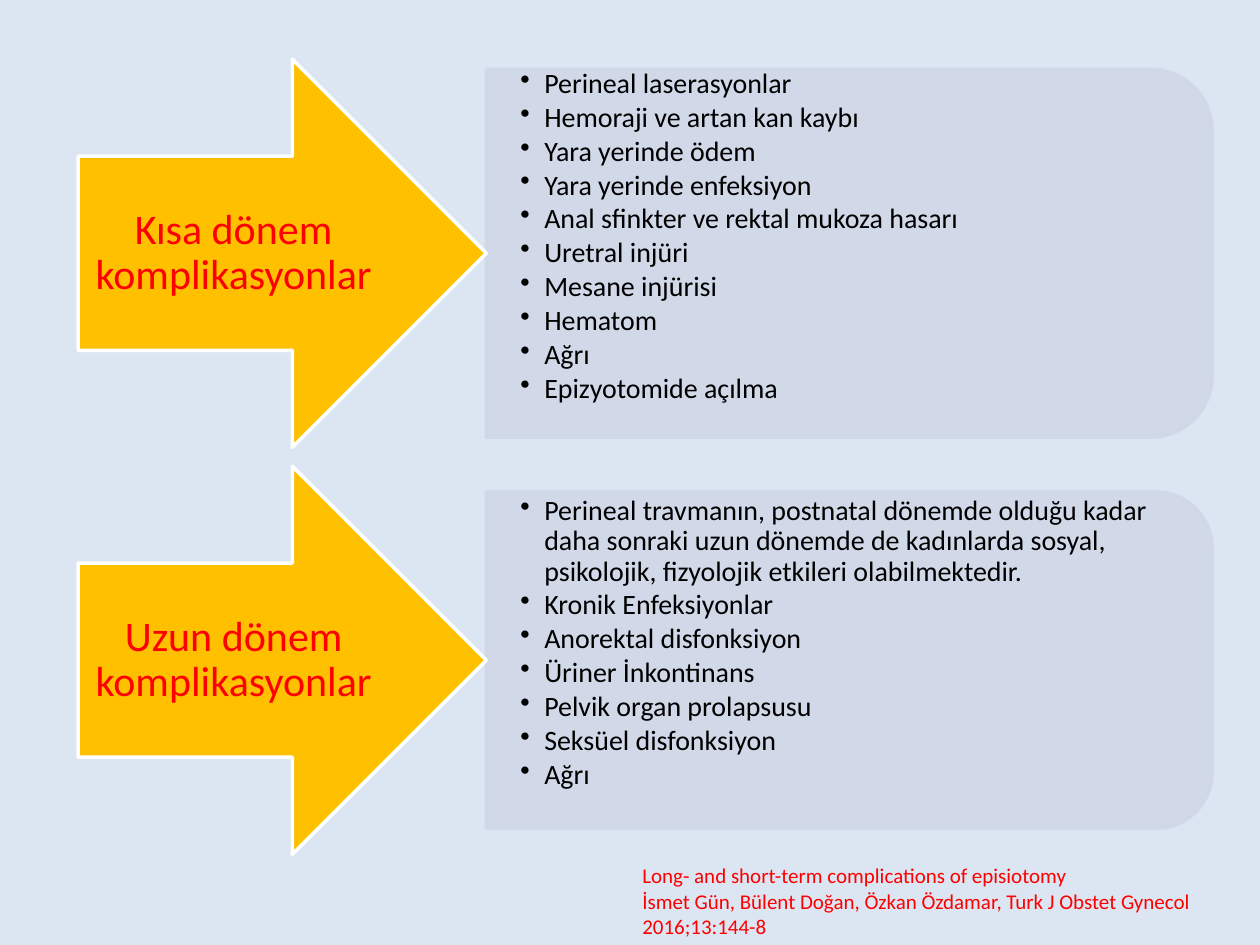
from dataclasses import dataclass

from lxml.etree import SubElement
from pptx import Presentation
from pptx.dml.color import RGBColor
from pptx.enum.shapes import MSO_SHAPE
from pptx.enum.text import MSO_ANCHOR, PP_ALIGN
from pptx.oxml.ns import qn
from pptx.shapes.autoshape import Shape
from pptx.slide import Slide
from pptx.util import Inches, Pt


@dataclass(frozen=True)
class Theme:
    font: str = "Calibri"
    background: RGBColor = RGBColor(0xDC, 0xE6, 0xF2)
    panel: RGBColor = RGBColor(0xD0, 0xD8, 0xE8)
    arrow: RGBColor = RGBColor(0xFF, 0xC0, 0x00)
    outline: RGBColor = RGBColor(0xFF, 0xFF, 0xFF)
    body: RGBColor = RGBColor(0x00, 0x00, 0x00)
    accent: RGBColor = RGBColor(0xFF, 0x00, 0x00)
    heading_size: int = 24
    body_size: int = 16
    citation_size: int = 12
    outline_width: int = 2
    panel_opacity: int = 90


@dataclass(frozen=True)
class Box:
    left: float
    top: float
    width: float
    height: float

    def lengths(self) -> tuple:
        return tuple(Inches(n) for n in (self.left, self.top, self.width, self.height))


@dataclass(frozen=True)
class Section:
    heading: str
    items: tuple[str, ...]
    arrow_top: float
    panel_height: float
    list_top: float


THEME = Theme()
ARROW_LEFT, ARROW_WIDTH, ARROW_HEIGHT = 0.62, 3.24, 3.08
HEADING_WIDTH = 2.47
PANEL_LEFT = ARROW_LEFT + ARROW_WIDTH
PANEL_WIDTH = 5.76
LIST_WIDTH = 5.62
BULLET_INDENT = 0.19

SECTIONS = (
    Section(
        "Kısa dönem komplikasyonlar",
        (
            "Perineal laserasyonlar",
            "Hemoraji ve artan kan kaybı",
            "Yara yerinde ödem",
            "Yara yerinde enfeksiyon",
            "Anal sfinkter ve rektal mukoza hasarı",
            "Uretral injüri",
            "Mesane injürisi",
            "Hematom",
            "Ağrı",
            "Epizyotomide açılma",
        ),
        arrow_top=0.47, panel_height=2.92, list_top=0.55,
    ),
    Section(
        "Uzun dönem komplikasyonlar",
        (
            "Perineal travmanın, postnatal dönemde olduğu kadar daha sonraki "
            "uzun dönemde de kadınlarda sosyal, psikolojik, fizyolojik etkileri "
            "olabilmektedir.",
            "Kronik Enfeksiyonlar",
            "Anorektal disfonksiyon",
            "Üriner İnkontinans",
            "Pelvik organ prolapsusu",
            "Seksüel disfonksiyon",
            "Ağrı",
        ),
        arrow_top=3.7, panel_height=2.67, list_top=3.94,
    ),
)
CITATION = (
    "Long- and short-term complications of episiotomy",
    "İsmet Gün, Bülent Doğan, Özkan Özdamar, Turk J Obstet Gynecol 2016;13:144-8",
)


def add_text(slide: Slide, box: Box, lines: tuple[str, ...], *, size: int,
             color: RGBColor, align: PP_ALIGN = PP_ALIGN.LEFT,
             anchor: MSO_ANCHOR = MSO_ANCHOR.TOP, side_inset: float = 0.1,
             end_inset: float = 0.05, line_spacing: float = 1.0,
             space_after: float = 0, bulleted: bool = False) -> None:
    frame = slide.shapes.add_textbox(*box.lengths()).text_frame
    frame.word_wrap = True
    frame.vertical_anchor = anchor
    frame.margin_left = frame.margin_right = Inches(side_inset)
    frame.margin_top = frame.margin_bottom = Inches(end_inset)
    for index, line in enumerate(lines):
        paragraph = frame.add_paragraph() if index else frame.paragraphs[0]
        paragraph.alignment = align
        paragraph.line_spacing = line_spacing
        paragraph.space_after = Pt(space_after)
        run = paragraph.add_run()
        run.text = line
        run.font.name = THEME.font
        run.font.size = Pt(size)
        run.font.color.rgb = color
        if bulleted:
            paragraph.level = 1
            properties = paragraph._p.get_or_add_pPr()
            properties.set("marL", str(Inches(BULLET_INDENT)))
            properties.set("indent", str(-Inches(BULLET_INDENT)))
            SubElement(properties, qn("a:buChar"), char="•")


def add_filled_shape(slide: Slide, kind: MSO_SHAPE, box: Box,
                     fill: RGBColor, line: RGBColor) -> Shape:
    shape = slide.shapes.add_shape(kind, *box.lengths())
    shape.shadow.inherit = False
    shape.fill.solid()
    shape.fill.fore_color.rgb = fill
    shape.line.color.rgb = line
    shape.line.width = Pt(THEME.outline_width)
    return shape


def add_panel(slide: Slide, center_y: float, height: float) -> None:
    """Draw a panel rounded on the right: a top-rounded shape turned a quarter."""
    box = Box(PANEL_LEFT + (PANEL_WIDTH - height) / 2, center_y - PANEL_WIDTH / 2,
              height, PANEL_WIDTH)
    panel = add_filled_shape(slide, MSO_SHAPE.ROUND_2_SAME_RECTANGLE, box,
                             THEME.panel, THEME.panel)
    panel.rotation = 90
    for color in panel._element.spPr.iter(qn("a:srgbClr")):
        SubElement(color, qn("a:alpha"), val=str(THEME.panel_opacity * 1000))


def add_section(slide: Slide, section: Section) -> None:
    center_y = section.arrow_top + ARROW_HEIGHT / 2
    add_panel(slide, center_y, section.panel_height)
    add_text(slide,
             Box(PANEL_LEFT, section.list_top, LIST_WIDTH, section.panel_height - 0.15),
             section.items, size=THEME.body_size, color=THEME.body,
             side_inset=0.27, end_inset=0, line_spacing=0.9, space_after=2.1,
             bulleted=True)
    add_filled_shape(slide, MSO_SHAPE.RIGHT_ARROW,
                     Box(ARROW_LEFT, section.arrow_top, ARROW_WIDTH, ARROW_HEIGHT),
                     THEME.arrow, THEME.outline)
    add_text(slide,
             Box(ARROW_LEFT, center_y - ARROW_HEIGHT / 4, HEADING_WIDTH, ARROW_HEIGHT / 2),
             (section.heading,), size=THEME.heading_size, color=THEME.accent,
             align=PP_ALIGN.CENTER, anchor=MSO_ANCHOR.MIDDLE, line_spacing=0.9)


def main() -> None:
    presentation = Presentation()
    presentation.slide_width = Inches(10)
    presentation.slide_height = Inches(7.5)
    slide = presentation.slides.add_slide(presentation.slide_layouts[6])
    slide.background.fill.solid()
    slide.background.fill.fore_color.rgb = THEME.background
    for section in SECTIONS:
        add_section(slide, section)
    add_text(slide, Box(5, 6.8, 5, 0.71), CITATION,
             size=THEME.citation_size, color=THEME.accent)
    presentation.save("out.pptx")


if __name__ == "__main__":
    main()
